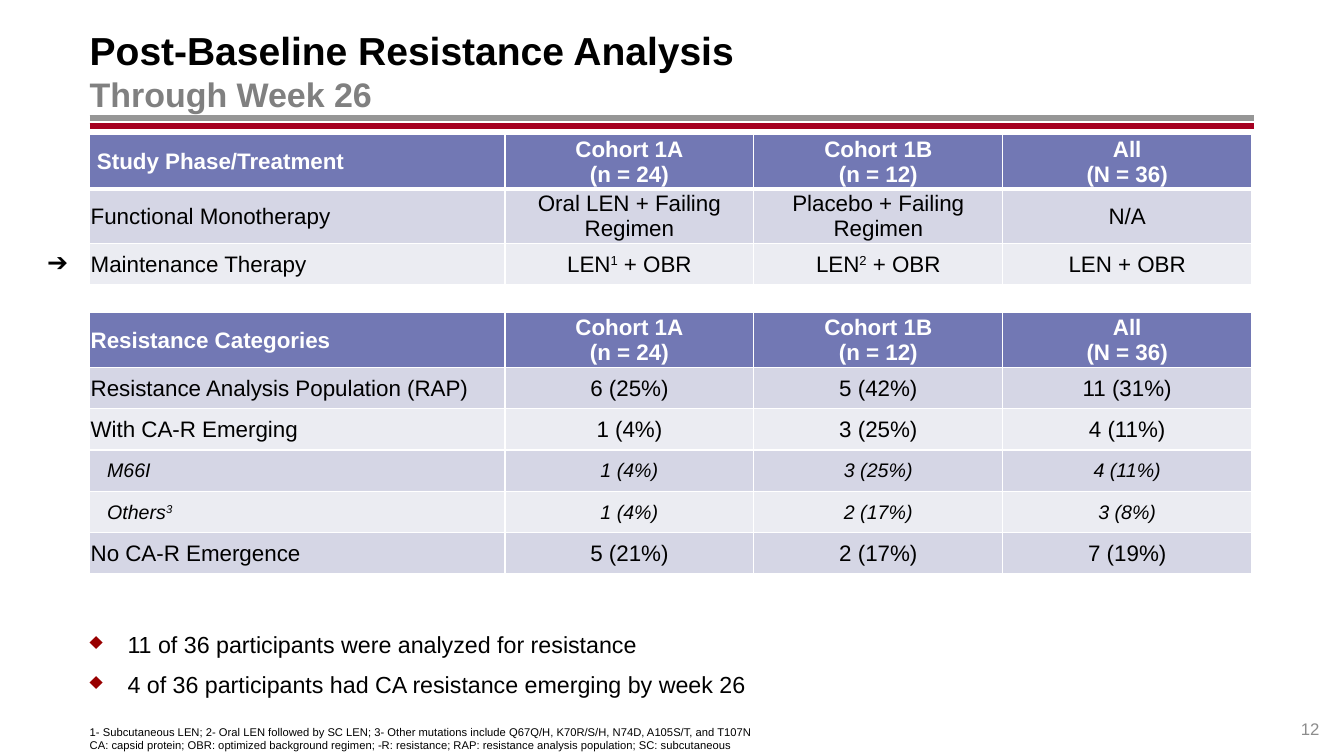
from lxml.etree import SubElement
from pptx import Presentation
from pptx.dml.color import RGBColor
from pptx.enum.shapes import MSO_CONNECTOR
from pptx.enum.text import MSO_ANCHOR, PP_ALIGN
from pptx.oxml.ns import qn
from pptx.util import Pt

# Content: ^ marks superscript, \n a line break
TITLE = "Post-Baseline Resistance Analysis"
SUBTITLE = "Through Week 26"
COHORTS = ["Cohort 1A\n(n = 24)", "Cohort 1B\n(n = 12)", "All\n(N = 36)"]
ROWS = [  # kind, cells
    ("header", ["Study Phase/Treatment", *COHORTS]),
    ("dark", ["Functional Monotherapy", "Oral LEN + Failing Regimen",
              "Placebo + Failing Regimen", "N/A"]),
    ("light", ["Maintenance Therapy", "LEN^1^ + OBR", "LEN^2^ + OBR", "LEN + OBR"]),
    ("gap", [""] * 4),
    ("header", ["Resistance Categories", *COHORTS]),
    ("dark", ["Resistance Analysis Population (RAP)", "6 (25%)", "5 (42%)", "11 (31%)"]),
    ("light", ["With CA-R Emerging", "1 (4%)", "3 (25%)", "4 (11%)"]),
    ("dark", ["M66I", "1 (4%)", "3 (25%)", "4 (11%)"]),
    ("light", ["Others^3^", "1 (4%)", "2 (17%)", "3 (8%)"]),
    ("dark", ["No CA-R Emergence", "5 (21%)", "2 (17%)", "7 (19%)"]),
]
DETAIL_ROWS = {7, 8}
FIRST_CELL_INDENT = {0: 4.5, 7: 11.7, 8: 11.7}
BULLETS = ["11 of 36 participants were analyzed for resistance",
           "4 of 36 participants had CA resistance emerging by week 26"]
FOOTNOTES = [
    "1- Subcutaneous LEN; 2- Oral LEN followed by SC LEN; 3- Other mutations include "
    "Q67Q/H, K70R/S/H, N74D, A105S/T, and T107N",
    "CA: capsid protein; OBR: optimized background regimen; -R: resistance; "
    "RAP: resistance analysis population; SC: subcutaneous",
]
PAGE = "12"

THEME = {
    "font": "Arial", "text": "000000", "white": "FFFFFF", "subtitle": "808080",
    "page": "8C8C8C", "bullet": "990000", "rules": ["969696", "A50021"],
    "fills": {"header": "7278B4", "dark": "D5D6E5", "light": "EBECF2", "gap": "FFFFFF"},
    "sz": {"title": 27.9, "subtitle": 24.3, "cell": 16, "detail": 14,
           "bullet": 16.6, "note": 8, "page": 12, "arrow": 18},
}
SZ = THEME["sz"]
LEFT, WIDTH = 64.1, 831.6
COLS = [296.6, 177.8, 177.8, 177.8]
ROW_H, GAP_H, TABLE_TOP = 29.5, 13, 95.8


def rgb(color):
    return RGBColor.from_string(color)


def add_run(p, text, size, color=THEME["text"], bold=False, italic=False):
    r = p.add_run()
    r.text = text
    f = r.font
    f.name, f.size, f.bold, f.italic = THEME["font"], Pt(size), bold, italic
    f.color.rgb = rgb(color)
    return r


def add_rich(p, text, size, **style):
    for i, line in enumerate(text.split("\n")):
        if i:
            p.add_line_break()
        for j, part in enumerate(line.split("^")):
            if part:
                r = add_run(p, part, size, **style)
                if j % 2:
                    r.font._element.set("baseline", "30000")


def add_box(s, x, y, w, h, anchor=MSO_ANCHOR.TOP, insets=(0, 0, 0, 0), wrap=True):
    tf = s.shapes.add_textbox(Pt(x), Pt(y), Pt(w), Pt(h)).text_frame
    tf.word_wrap, tf.vertical_anchor = wrap, anchor
    tf.margin_left, tf.margin_top, tf.margin_right, tf.margin_bottom = map(Pt, insets)
    return tf


def paragraphs(tf, texts):
    for i, text in enumerate(texts):
        yield (tf.add_paragraph() if i else tf.paragraphs[0]), text


def set_borders(cell, top, bottom):
    tcPr = cell._tc.get_or_add_tcPr()
    widths = [("L", 1), ("R", 1), ("T", top), ("B", bottom)]
    for i, (side, width) in enumerate(widths):
        ln = SubElement(tcPr, qn(f"a:ln{side}"), w=str(Pt(width)))
        fill = SubElement(ln, qn("a:solidFill"))
        SubElement(fill, qn("a:srgbClr"), val=THEME["white"])
        tcPr.insert(i, ln)


def add_results_table(s):
    height = ROW_H * (len(ROWS) - 1) + GAP_H
    table = s.shapes.add_table(len(ROWS), len(COLS), Pt(LEFT), Pt(TABLE_TOP),
                               Pt(sum(COLS)), Pt(height)).table
    for col, width in zip(table.columns, COLS):
        col.width = Pt(width)
    for i, (kind, texts) in enumerate(ROWS):
        table.rows[i].height = Pt(GAP_H if kind == "gap" else ROW_H)
        header, detail = kind == "header", i in DETAIL_ROWS
        size = SZ["detail" if detail else "cell"]
        for j, text in enumerate(texts):
            cell = table.cell(i, j)
            cell.fill.solid()
            cell.fill.fore_color.rgb = rgb(THEME["fills"][kind])
            set_borders(cell, top=3 if i == 1 else 1, bottom=3 if i == 0 else 1)
            cell.vertical_anchor = MSO_ANCHOR.MIDDLE
            indent = 0 if j else FIRST_CELL_INDENT.get(i, 0)
            cell.margin_left = Pt(0.7 + indent)
            cell.margin_right = cell.margin_top = Pt(0.7)
            cell.margin_bottom = 0
            p = cell.text_frame.paragraphs[0]
            p.alignment = PP_ALIGN.CENTER if j else PP_ALIGN.LEFT
            add_rich(p, text, size, bold=header, italic=detail,
                     color=THEME["white" if header else "text"])
            if not text:
                SubElement(p._p, qn("a:endParaRPr"), sz=str(size * 100))


def main():
    prs = Presentation()
    prs.slide_width, prs.slide_height = Pt(960), Pt(540)
    s = prs.slides.add_slide(prs.slide_layouts[6])

    # Double rule under the title
    for i, color in enumerate(THEME["rules"]):
        y = Pt(84.3 + 5.9 * i)
        rule = s.shapes.add_connector(MSO_CONNECTOR.STRAIGHT, Pt(LEFT), y,
                                      Pt(LEFT + WIDTH), y)
        rule.line.color.rgb, rule.line.width = rgb(color), Pt(4.25)
        SubElement(rule._element.spPr, qn("a:effectLst"))

    # Title
    tf = add_box(s, LEFT, 19.4, WIDTH, 61.9, MSO_ANCHOR.MIDDLE, (0, 3.6, 7.2, 3.6))
    p = tf.paragraphs[0]
    add_run(p, TITLE, SZ["title"], bold=True)
    p.add_line_break()
    add_run(p, SUBTITLE, SZ["subtitle"], THEME["subtitle"], bold=True)

    add_results_table(s)

    # Key findings
    tf = add_box(s, LEFT, 446.4, 792.7, 52.6, insets=(0, 3.6, 0, 3.6))
    for p, text in paragraphs(tf, BULLETS):
        pPr = p._p.get_or_add_pPr()
        pPr.set("marL", str(Pt(27)))
        pPr.set("indent", str(Pt(-27)))
        color = SubElement(pPr, qn("a:buClr"))
        SubElement(color, qn("a:srgbClr"), val=THEME["bullet"])
        SubElement(pPr, qn("a:buChar"), char="♦")
        p.space_before = Pt(0 if text == BULLETS[0] else 9)
        add_run(p, text, SZ["bullet"])

    # Footnotes
    tf = add_box(s, LEFT, 517.7, WIDTH, 19.4, MSO_ANCHOR.BOTTOM)
    for p, text in paragraphs(tf, FOOTNOTES):
        add_run(p, text, SZ["note"])

    # Page number
    p = add_box(s, 895.7, 499, 46.8, 28.8, MSO_ANCHOR.BOTTOM).paragraphs[0]
    p.alignment = PP_ALIGN.RIGHT
    add_run(p, PAGE, SZ["page"], THEME["page"])

    # Arrow marking the maintenance row
    tf = add_box(s, 26.6, 172.1, 33.8, 28.8, insets=(7.2, 3.6, 7.2, 3.6), wrap=False)
    add_run(tf.paragraphs[0], "➔", SZ["arrow"])

    prs.save("out.pptx")


if __name__ == "__main__":
    main()
